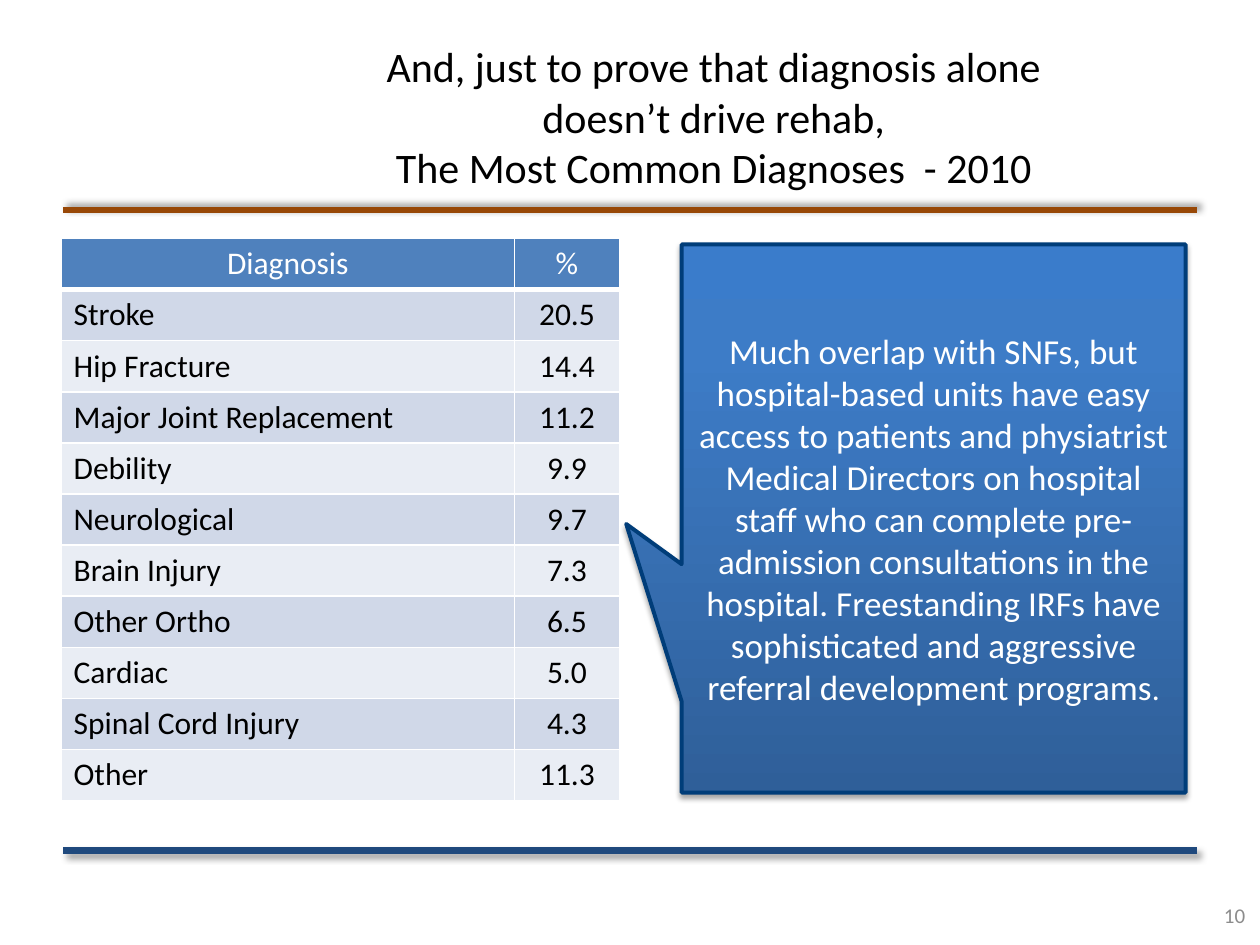
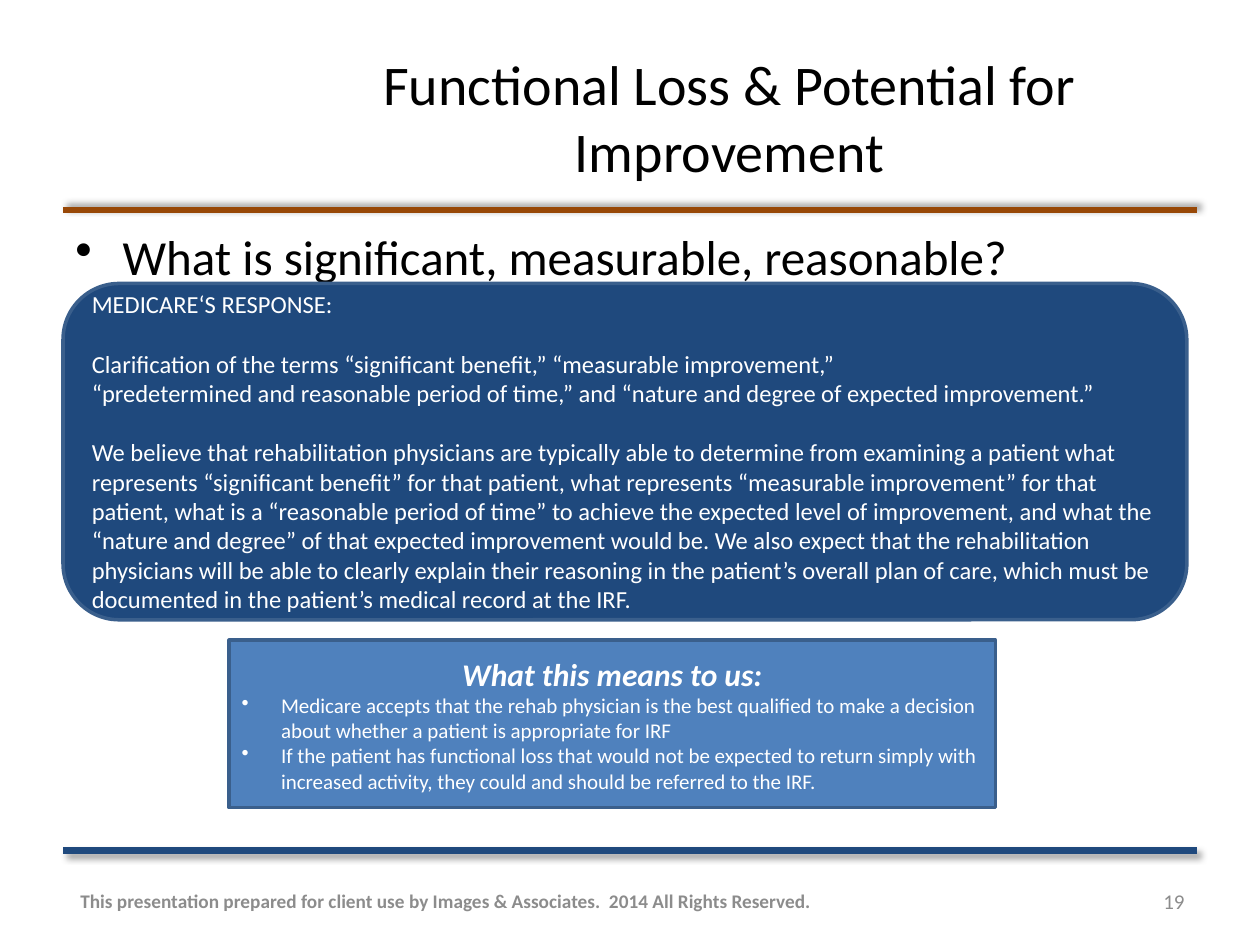
from dataclasses import dataclass

from lxml.etree import SubElement
from pptx import Presentation
from pptx.dml.color import RGBColor
from pptx.enum.shapes import MSO_CONNECTOR, MSO_SHAPE
from pptx.enum.text import MSO_ANCHOR, PP_ALIGN
from pptx.oxml.ns import qn
from pptx.util import Pt


@dataclass(frozen=True)
class Theme:
    font: str = "Calibri"
    black: str = "000000"
    white: str = "FFFFFF"
    grey: str = "8C8C8C"
    rust: str = "984807"
    navy: str = "1F497D"
    blue: str = "4F81BD"
    outline: str = "3A5F8C"
    callout_outline: str = "003D79"
    callout_stops: tuple = ((0, "2F5F99"), (80, "3D7CC7"), (100, "3A7CCB"))
    row_fills: tuple = ("D0D8E8", "E9EDF4")
    title: int = 32
    long_title: int = 24
    body: int = 28
    callout: int = 20
    table: int = 18
    heading: int = 18
    response: int = 14
    small: int = 12
    footer: int = 11


THEME = Theme()
CENTER, RIGHT = PP_ALIGN.CENTER, PP_ALIGN.RIGHT

DIAGNOSES = [
    ("Stroke", "20.5"),
    ("Hip Fracture", "14.4"),
    ("Major Joint Replacement", "11.2"),
    ("Debility", "9.9"),
    ("Neurological", "9.7"),
    ("Brain Injury", "7.3"),
    ("Other Ortho", "6.5"),
    ("Cardiac", "5.0"),
    ("Spinal Cord Injury", "4.3"),
    ("Other", "11.3"),
]
OVERLAP = (
    "Much overlap with SNFs, but hospital-based units have easy access to "
    "patients and physiatrist Medical Directors on hospital staff who can "
    "complete pre-admission consultations in the hospital. Freestanding IRFs "
    "have sophisticated and aggressive referral development programs"
)
# Each paragraph with the space before it
RESPONSE = [
    ("MEDICARE‘S RESPONSE:", 0),
    ("Clarification of the terms “significant benefit,” “measurable improvement,”", 17),
    ("“predetermined and reasonable period of time,” and “nature and degree of "
     "expected improvement.”", 0),
    ("We believe that rehabilitation physicians are typically able to determine "
     "from examining a patient what represents “significant benefit” for that "
     "patient, what represents “measurable improvement” for that patient, what is "
     "a “reasonable period of time” to achieve the expected level of improvement, "
     "and what the “nature and degree” of that expected improvement would be. We "
     "also expect that the rehabilitation physicians will be able to clearly "
     "explain their reasoning in the patient’s overall plan of care, which must "
     "be documented in the patient’s medical record at the IRF.", 17),
]
MEANINGS = [
    "Medicare accepts that the rehab physician is the best qualified to make a "
    "decision about whether a patient is appropriate for IRF",
    "If the patient has functional loss that would not be expected to return "
    "simply with increased activity, they could and should be referred to the IRF.",
]


# Text
def add_span(para, text, size, color, bold=False, italic=False):
    span = para.add_run()
    span.text = text
    font = span.font
    font.name, font.size = THEME.font, Pt(size)
    font.bold, font.italic = bold, italic
    font.color.rgb = RGBColor.from_string(color)


def write_text(frame, text, size, color=THEME.white, align=PP_ALIGN.LEFT,
               before=0, bullet_indent=0, **style):
    """Write one paragraph; a newline in the text is a line break."""
    para = frame.paragraphs[0]
    if para.runs:
        para = frame.add_paragraph()
    para.alignment = align
    if before:
        para.space_before = Pt(before)
    if bullet_indent:
        properties = para._p.get_or_add_pPr()
        properties.set("marL", str(Pt(bullet_indent)))
        properties.set("indent", str(-Pt(bullet_indent)))
        SubElement(properties, qn("a:buChar"), char="•")
    for index, line in enumerate(text.split("\n")):
        if index:
            para.add_line_break()
        add_span(para, line, size, color, **style)
    return para


def add_text_box(page, place, text, anchor=MSO_ANCHOR.MIDDLE, **style):
    box = page.shapes.add_textbox(*map(Pt, place))
    box.text_frame.word_wrap = True
    box.text_frame.vertical_anchor = anchor
    write_text(box.text_frame, text, **style)


# Lines and shapes
def add_color(parent, color):
    return SubElement(parent, qn("a:srgbClr"), val=color)


def add_shadow(effects, alpha, blur, distance, angle):
    shadow = SubElement(effects, qn("a:outerShdw"), blurRad=str(Pt(blur)),
                        dist=str(Pt(distance)), dir=str(angle * 60000),
                        rotWithShape="0")
    SubElement(add_color(shadow, THEME.black), qn("a:alpha"), val=str(alpha * 1000))


def add_rule(page, y, color, shadow_angle):
    rule = page.shapes.add_connector(
        MSO_CONNECTOR.STRAIGHT, Pt(36), Pt(y), Pt(684), Pt(y))
    rule.line.color.rgb = RGBColor.from_string(color)
    rule.line.width = Pt(3.5)
    effects = SubElement(rule._element.spPr, qn("a:effectLst"))
    add_shadow(effects, 40, 4, 3, shadow_angle)


def add_panel(page, kind, place, fill=None, outline=THEME.outline, width=2):
    panel = page.shapes.add_shape(kind, *map(Pt, place))
    panel.shadow.inherit = False
    if fill:
        panel.fill.solid()
        panel.fill.fore_color.rgb = RGBColor.from_string(fill)
    panel.line.color.rgb = RGBColor.from_string(outline)
    panel.line.width = Pt(width)
    panel.text_frame.word_wrap = True
    panel.text_frame.vertical_anchor = MSO_ANCHOR.MIDDLE
    return panel


def add_callout(page, place):
    callout = add_panel(page, MSO_SHAPE.RECTANGULAR_CALLOUT, place,
                        outline=THEME.callout_outline, width=2.25)
    callout.adjustments[0], callout.adjustments[1] = -0.61, 0.01
    # Three-stop gradient from bottom to top
    callout.fill.gradient()
    callout.fill.gradient_angle = 90
    properties = callout._element.spPr
    stops = properties.find(".//" + qn("a:gsLst"))
    for stop in list(stops):
        stops.remove(stop)
    for position, color in THEME.callout_stops:
        add_color(SubElement(stops, qn("a:gs"), pos=str(position * 1000)), color)
    add_shadow(properties.find(qn("a:effectLst")), 35, 3.1, 1.8, 90)
    return callout


# Table
def format_cell(cell, fill, bottom=1):
    properties = cell._tc.get_or_add_tcPr()
    for side, width in zip("LRTB", (1, 1, 1, bottom)):
        border = SubElement(properties, qn("a:ln" + side), w=str(Pt(width)))
        add_color(SubElement(border, qn("a:solidFill")), THEME.white)
    cell.fill.solid()
    cell.fill.fore_color.rgb = RGBColor.from_string(fill)


def add_diagnosis_table(page, left, top, widths, row_height):
    rows = [("Diagnosis", "%"), *DIAGNOSES]
    table = page.shapes.add_table(
        len(rows), len(widths), Pt(left), Pt(top),
        Pt(sum(widths)), Pt(row_height * len(rows))).table
    table.horz_banding = False
    for column, width in zip(table.columns, widths):
        column.width = Pt(width)
    for row, values in enumerate(rows):
        table.rows[row].height = Pt(row_height)
        header = row == 0
        fill = THEME.blue if header else THEME.row_fills[(row - 1) % 2]
        for column, value in enumerate(values):
            cell = table.cell(row, column)
            format_cell(cell, fill, bottom=3 if header else 1)
            write_text(cell.text_frame, value, size=THEME.table,
                       color=THEME.white if header else THEME.black,
                       align=CENTER if header or column else PP_ALIGN.LEFT)


# Shared page parts
def add_page(deck, title, title_width, title_size, number, number_at):
    page = deck.slides.add_slide(deck.slide_layouts[6])
    add_rule(page, 120.25, THEME.rust, 315)
    add_rule(page, 486, THEME.navy, 45)
    add_text_box(page, (131.8, 21.6, title_width, 90), title,
                 size=title_size, color=THEME.black, align=CENTER)
    add_text_box(page, (*number_at, 167.8, 28.8), number,
                 size=THEME.small, color=THEME.grey, align=RIGHT)
    return page


def add_diagnoses_page(deck):
    page = add_page(
        deck, "And, just to prove that diagnosis alone\ndoesn’t drive rehab,\n"
        "The Most Common Diagnoses  - 2010",
        552.2, THEME.long_title, "10", (550.8, 508.3))
    add_diagnosis_table(page, 34.9, 136.3, (259.2, 59.8), 29.2)
    callout = add_callout(page, (389.5, 139.7, 288, 313.2))
    para = write_text(callout.text_frame, OVERLAP, size=THEME.callout, align=CENTER)
    add_span(para, ".", THEME.table, THEME.white)


def add_improvement_page(deck):
    page = add_page(deck, "Functional Loss & Potential for Improvement",
                    570.2, THEME.title, "19", (516.2, 500.4))
    add_text_box(page, (36, 126, 648, 366),
                 "What is significant, measurable, reasonable?",
                 anchor=MSO_ANCHOR.TOP, size=THEME.body, color=THEME.black,
                 bullet_indent=27)
    response = add_panel(page, MSO_SHAPE.ROUNDED_RECTANGLE,
                         (36, 162, 642.2, 192.2), THEME.navy)
    for text, before in RESPONSE:
        write_text(response.text_frame, text, size=THEME.response, before=before)
    add_text_box(page, (36, 500.4, 437.8, 28.8),
                 "This presentation prepared for client use by Images & Associates.  "
                 "2014 All Rights Reserved.",
                 size=THEME.footer, color=THEME.grey, align=CENTER, bold=True)
    meaning = add_panel(page, MSO_SHAPE.RECTANGLE,
                        (131, 365.8, 437.8, 95.8), THEME.blue)
    write_text(meaning.text_frame, "What this means to us:", size=THEME.heading,
               align=CENTER, bold=True, italic=True)
    for text in MEANINGS:
        write_text(meaning.text_frame, text, size=THEME.small, bullet_indent=22.5)


def main():
    deck = Presentation()
    deck.slide_width, deck.slide_height = Pt(720), Pt(540)
    add_diagnoses_page(deck)
    add_improvement_page(deck)
    deck.save("out.pptx")


if __name__ == "__main__":
    main()
